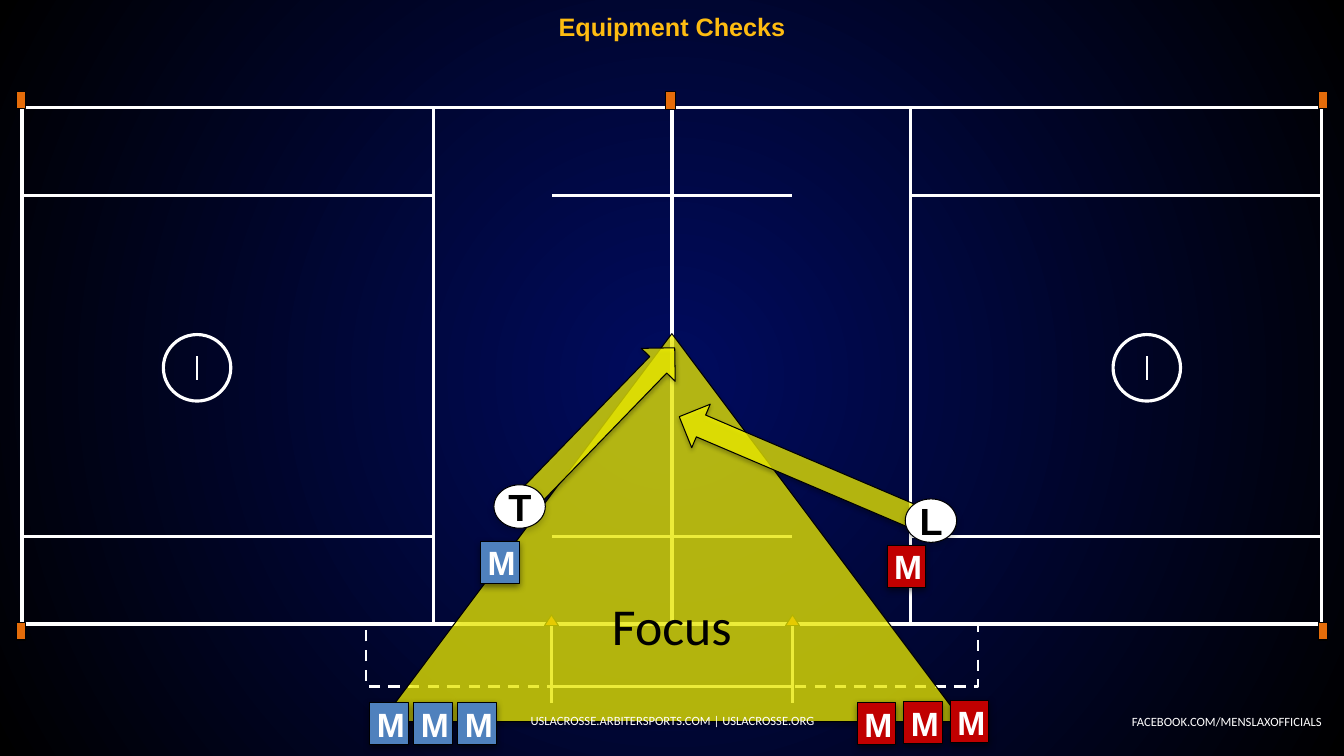
import pptx
import pptx.dml.color
import pptx.enum.dml
import pptx.enum.shapes
import pptx.enum.text
import pptx.oxml
import pptx.oxml.ns
import pptx.util

Pt = pptx.util.Pt
KIND = pptx.enum.shapes.MSO_SHAPE
ALIGN = pptx.enum.text.PP_ALIGN
NS = pptx.oxml.ns.nsdecls("a")
qn = pptx.oxml.ns.qn

WIDE, HIGH = 960, 540
WHITE, BLACK, CONE = "FFFFFF", "000000", "E46C0A"
BLUE, RED, YELLOW, GOLD = "4F81BD", "C00000", "FFFF00", "FEBC11"


def color(code):
    return pptx.dml.color.RGBColor.from_string(code)


class Board:
    sans, body = "Arial", "Calibri"

    def __init__(self, slide):
        self.slide = slide
        self.shapes = slide.shapes

    def back(self, inner, outer):
        fill = self.slide.background.fill
        fill.gradient()
        for stop, code in zip(fill.gradient_stops, (inner, outer)):
            stop.color.rgb = color(code)
        grad = self.slide.element.find(".//" + qn("a:gradFill"))
        grad.replace(grad.find(qn("a:lin")), pptx.oxml.parse_xml(
            f'<a:path {NS} path="circle"><a:fillToRect l="50000" t="50000" '
            'r="50000" b="50000"/></a:path>'))

    def paint(self, shape, fill, line, width, dash=False, alpha=None, shade=None):
        props = shape.element.spPr
        if fill:
            shape.fill.solid()
            shape.fill.fore_color.rgb = color(fill)
            if alpha:
                tone = props.find(qn("a:solidFill")).find(qn("a:srgbClr"))
                tone.append(pptx.oxml.parse_xml(f'<a:alpha {NS} val="{alpha * 1000}"/>'))
        else:
            shape.fill.background()
        shape.line.color.rgb = color(line)
        shape.line.width = Pt(width)
        if dash:
            shape.line.dash_style = pptx.enum.dml.MSO_LINE.DASH
        shape.shadow.inherit = False
        if shade:
            depth, blur, drop = shade
            props.find(qn("a:effectLst")).append(pptx.oxml.parse_xml(
                f'<a:outerShdw {NS} blurRad="{Pt(blur)}" dist="{Pt(drop)}" dir="5400000" '
                f'algn="ctr" rotWithShape="0"><a:srgbClr val="000000">'
                f'<a:alpha val="{depth * 1000}"/></a:srgbClr></a:outerShdw>'))

    def shape(self, kind, x, y, w, h, fill=None, line=BLACK, width=0.75, turn=0, **style):
        item = self.shapes.add_shape(kind, Pt(x), Pt(y), Pt(w), Pt(h))
        item.rotation = turn
        self.paint(item, fill, line, width, **style)
        return item

    def line(self, x1, y1, x2, y2, width=2.25):
        item = self.shapes.add_connector(
            pptx.enum.shapes.MSO_CONNECTOR.STRAIGHT, Pt(x1), Pt(y1), Pt(x2), Pt(y2))
        item.line.color.rgb = color(WHITE)
        item.line.width = Pt(width)
        item.element.spPr.append(pptx.oxml.parse_xml(f"<a:effectLst {NS}/>"))

    def wedge(self, x, y, w, h):
        form = self.shapes.build_freeform(Pt(x), Pt(y))
        form.add_line_segments([(Pt(x + w / 2), Pt(y + h)), (Pt(x - w / 2), Pt(y + h))])
        self.paint(form.convert_to_shape(), CONE, BLACK, 0.75)

    def label(self, shape, words, size, font, code, bold=False,
              align=ALIGN.CENTER, pad=(7.2, 3.6), wrap=True):
        frame = shape.text_frame
        frame.word_wrap = wrap
        frame.vertical_anchor = pptx.enum.text.MSO_ANCHOR.MIDDLE
        frame.margin_left = frame.margin_right = Pt(pad[0])
        frame.margin_top = frame.margin_bottom = Pt(pad[1])
        para = frame.paragraphs[0]
        para.alignment = align
        run = para.add_run()
        run.text = words
        run.font.size, run.font.name, run.font.bold = Pt(size), font, bold
        run.font.color.rgb = color(code)

    def text(self, x, y, w, h, words, size, font, code, **style):
        box = self.shapes.add_textbox(Pt(x), Pt(y), Pt(w), Pt(h))
        self.label(box, words, size, font, code, **style)

    def man(self, x, y, fill):
        item = self.shape(KIND.RECTANGLE, x, y, 27.4, 30.2, fill, shade=(50, 5, 2))
        self.label(item, "M", 24, self.sans, WHITE, bold=True, pad=(5, 5))

    def ref(self, x, y, mark):
        item = self.shape(KIND.OVAL, x, y, 36.7, 31, WHITE, shade=(20, 5, 2))
        self.label(item, mark, 27, self.sans, BLACK, bold=True, pad=(5, 5))


def field(board):
    mid = WIDE / 2
    edge, goal, wing, box = 15.8, 309.4, 393.9, 261.4
    rows = [76.5, 139.5, 383, 445.8]
    top, base, bench = rows[0], rows[-1], 490.6

    for flip in (False, True):
        def at(x, w=0):
            return WIDE - x - w if flip else x

        def rect(x, y, w, h, **style):
            board.shape(KIND.RECTANGLE, at(x, w), y, w, h, **style)

        white = dict(line=WHITE, width=2.25)
        # Midfield half and the three bands beside it
        rect(goal, top, mid - goal, base - top, **white)
        for y, low in zip(rows, rows[1:]):
            rect(edge, y, goal - edge, low - y, **white)
        # Corner cones
        for y in (65.5, 445):
            rect(11.7, y, 6.5, 12.2, fill=CONE)
        # Bench side
        rect(box, 446.4, wing - box, bench - 446.4, line=WHITE, width=2, dash=True)
        board.wedge(at(wing), 439.2, 10, 7.7)
        board.line(at(wing), 501.8, at(wing), 447)
        # Goal crease
        board.shape(KIND.OVAL, at(116.7, 48.2), 239, 48.2, 47.5, **white)
        board.line(at(141), 271.4, at(141), 254.2, 1.5)
        # Wing lines
        for y in (rows[1], rows[2], bench):
            board.line(mid, y, at(wing + 0.5), y)
    board.shape(KIND.RECTANGLE, 475.2, 65.5, 7.2, 13, CONE)


def main():
    deck = pptx.Presentation()
    deck.slide_width, deck.slide_height = Pt(WIDE), Pt(HIGH)
    board = Board(deck.slides.add_slide(deck.slide_layouts[6]))
    board.back("000B5F", BLACK)
    field(board)
    board.text(798.5, 506.2, 152.6, 18, "FACEBOOK.COM/MENSLAXOFFICIALS",
               9, board.body, WHITE, align=ALIGN.RIGHT, wrap=False)

    # Focus zone and sight arrows
    glow = dict(fill=YELLOW, alpha=70, shade=(35, 3.1, 1.8))
    zone = board.shape(KIND.ISOSCELES_TRIANGLE, 272.2, 238.3, 415.4, 277.2, **glow)
    board.label(zone, "Focus", 37, board.body, BLACK, pad=(9.4, 5))
    board.shape(KIND.RIGHT_ARROW, 343.4, 290.2, 163.4, 33.8, turn=314.1, **glow)
    board.shape(KIND.RIGHT_ARROW, 477.4, 319, 195.1, 33.8, turn=203.1, **glow)

    # Title and footer
    board.text(0, 3.6, WIDE, 30.2, "Equipment Checks", 18, board.sans, GOLD, bold=True)
    board.text(328.3, 500.4, 303.8, 28.8, "USLACROSSE.ARBITERSPORTS.COM | USLACROSSE.ORG",
               9, board.body, WHITE)

    # Players and officials
    board.man(343.4, 386.6, BLUE)
    board.man(633.6, 389.5, RED)
    for i in range(3):
        board.man(264.2 + 31.4 * i, 501.8, BLUE)
        board.man(612.5 + 33.2 * i, 501.8 - 0.7 * i, RED)
    board.ref(352.8, 346.3, "T")
    board.ref(646.6, 356.4, "L")

    deck.save("out.pptx")


if __name__ == "__main__":
    main()
